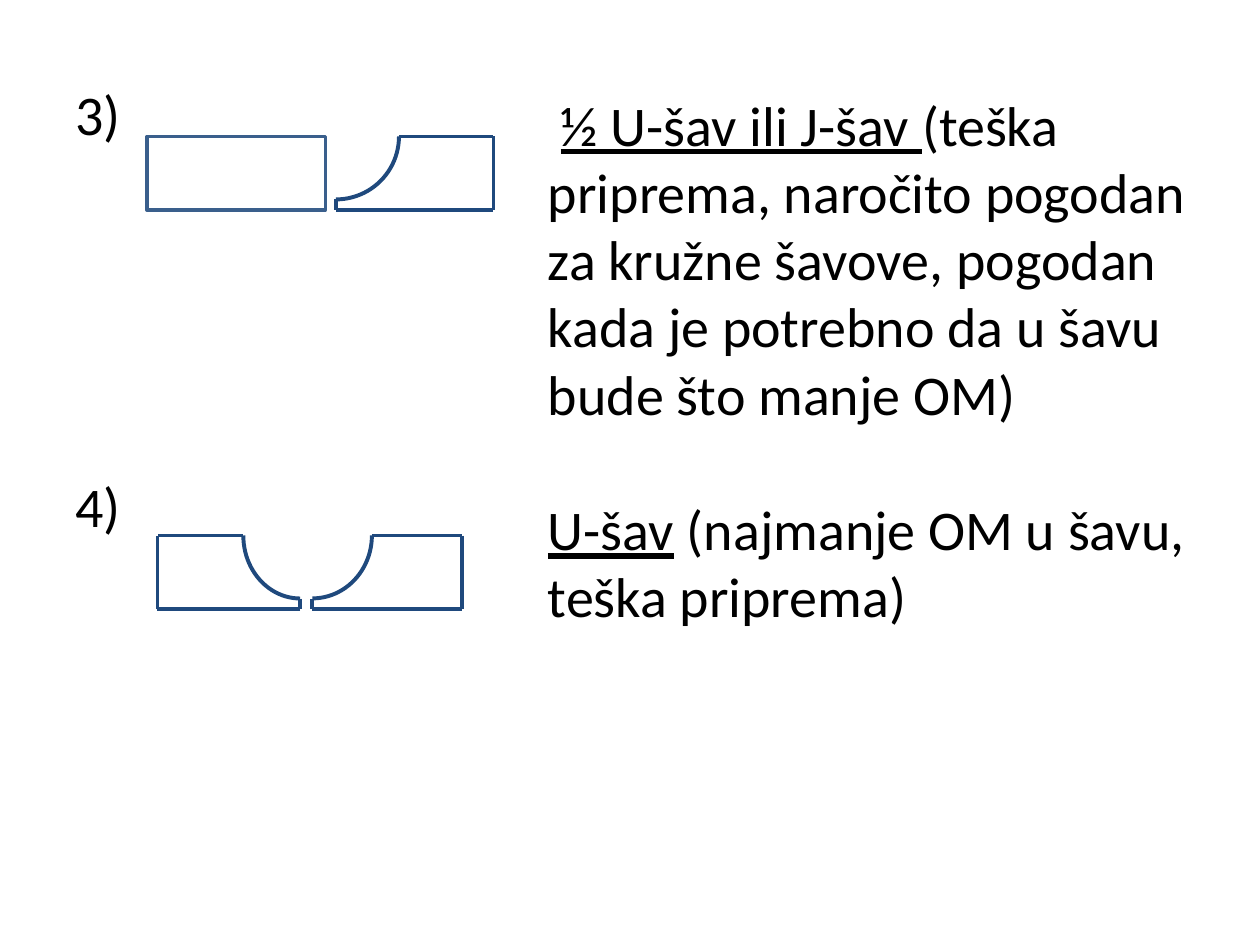
from lxml.etree import SubElement
from pptx import Presentation
from pptx.dml.color import RGBColor
from pptx.enum.shapes import MSO_CONNECTOR, MSO_SHAPE
from pptx.enum.text import MSO_AUTO_SIZE
from pptx.oxml.ns import qn
from pptx.util import Pt

BLACK = RGBColor(0x00, 0x00, 0x00)
NAVY = RGBColor(0x1F, 0x49, 0x7D)
STEEL = RGBColor(0x3A, 0x5F, 0x8C)

NUMBERS = [("3)", 6.4), ("4)", 185.5)]
DESCRIPTIONS = [
    (" ", "½ U-šav ili J-šav ",
     "(teška priprema, naročito pogodan za kružne šavove, "
     "pogodan kada je potrebno da u šavu bude što manje OM)", 0),
    ("", "U-šav", " (najmanje OM u šavu, teška priprema)", 39),
]
SQUARE_PLATE = (84, 78, 102, 42)
# root x, shoulder x, outer x, top y
GROOVED_PLATES = [
    (192, 228, 282, 78),
    (178.5, 212.5, 264, 306),
    (171.5, 139, 90, 306),
]
PLATE_H, GROOVE_H = 42, 36


def style_text(p, before):
    p.font.name, p.font.size = "Calibri", Pt(32)
    p.font.color.rgb = BLACK
    p.space_before = Pt(before)


def outline(shape, color, width):
    shape.line.color.rgb = color
    shape.line.width = Pt(width)


def add_outlined(s, kind, box, color, width):
    shape = s.shapes.add_shape(kind, *map(Pt, box))
    shape.shadow.inherit = False
    shape.fill.background()
    outline(shape, color, width)
    return shape


def add_grooved_plate(s, root, shoulder, outer, top):
    rx = abs(shoulder - root)
    bottom, lip = top + PLATE_H, top + GROOVE_H
    if shoulder > root:
        w, h, angle = 2 * GROOVE_H, 2 * rx, 90
    else:
        w, h, angle = 2 * rx, 2 * GROOVE_H, 180
    arc = add_outlined(s, MSO_SHAPE.ARC, (root - w / 2, top - h / 2, w, h), NAVY, 2.25)
    arc.rotation = angle
    edges = [
        (root, lip, root, bottom),
        (root, bottom, outer, bottom),
        (shoulder, top, outer, top),
        (outer, top, outer, bottom),
    ]
    for edge in edges:
        line = s.shapes.add_connector(MSO_CONNECTOR.STRAIGHT, *map(Pt, edge))
        outline(line, NAVY, 2.25)
        SubElement(line._element.spPr, qn("a:effectLst"))


def main():
    prs = Presentation()
    prs.slide_width, prs.slide_height = Pt(720), Pt(540)
    s = prs.slides.add_slide(prs.slide_layouts[1])
    title = s.shapes.title._element
    title.getparent().remove(title)

    body = s.placeholders[1]
    body.left, body.top, body.width, body.height = map(Pt, (36, 42, 648, 440))
    tf = body.text_frame
    tf.auto_size = MSO_AUTO_SIZE.NONE
    for i, (number, before) in enumerate(NUMBERS):
        p = tf.add_paragraph() if i else tf.paragraphs[0]
        p.text = number
        style_text(p, before)
        pPr = p._p.get_or_add_pPr()
        pPr.set("marL", str(Pt(27)))
        pPr.set("indent", str(Pt(-27)))
        pPr.insert_element_before(
            pPr.makeelement(qn("a:buNone"), {}), "a:tabLst", "a:defRPr", "a:extLst")

    add_outlined(s, MSO_SHAPE.RECTANGLE, SQUARE_PLATE, STEEL, 2)
    for plate in GROOVED_PLATES:
        add_grooved_plate(s, *plate)

    tf = s.shapes.add_textbox(*map(Pt, (306, 48, 384, 317.5))).text_frame
    tf.word_wrap = True
    for i, (lead, name, detail, before) in enumerate(DESCRIPTIONS):
        p = tf.add_paragraph() if i else tf.paragraphs[0]
        style_text(p, before)
        for text in filter(None, (lead, name, detail)):
            r = p.add_run()
            r.text = text
            if text == name:
                r.font.underline = True

    prs.save("out.pptx")


if __name__ == "__main__":
    main()
